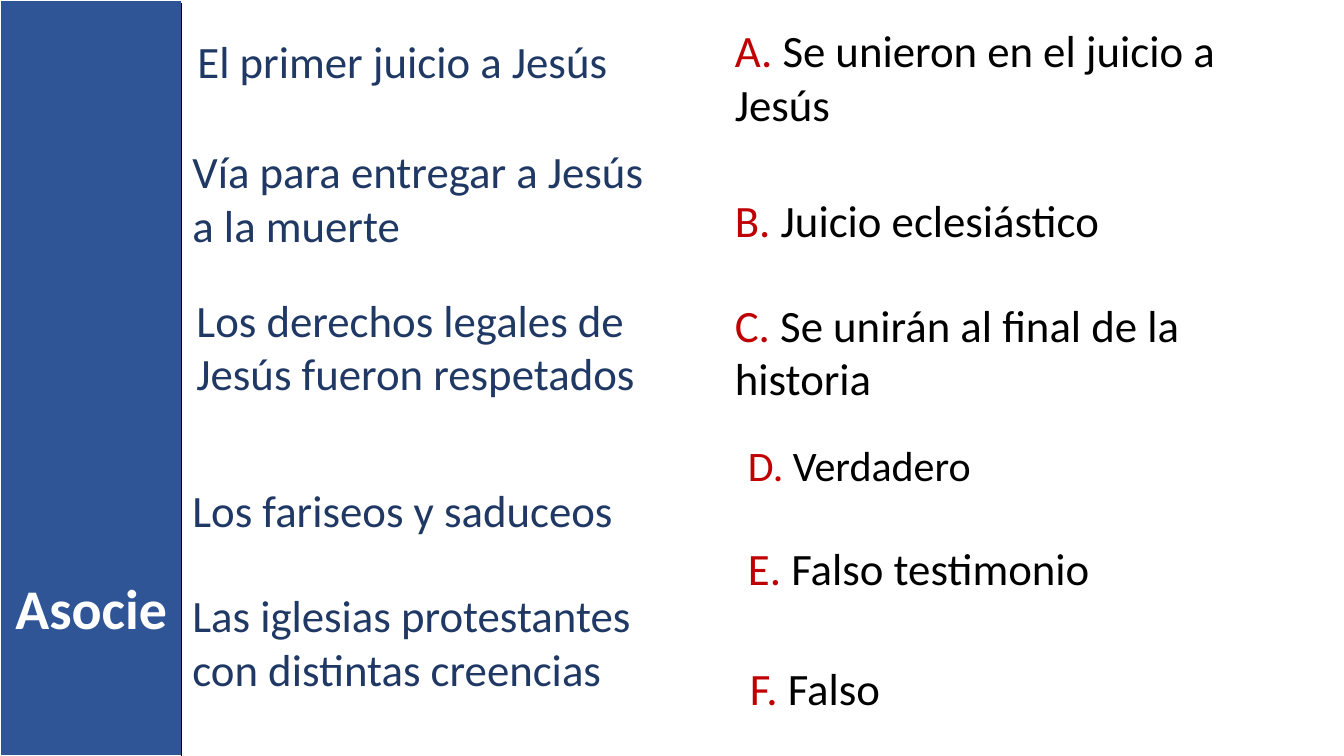
from dataclasses import dataclass

from lxml.etree import SubElement
from pptx import Presentation
from pptx.dml.color import RGBColor
from pptx.enum.shapes import MSO_CONNECTOR, MSO_SHAPE
from pptx.enum.text import MSO_AUTO_SIZE, PP_ALIGN
from pptx.oxml.ns import qn
from pptx.util import Inches, Pt


@dataclass(frozen=True)
class Theme:
    """Colours, font and type sizes of the slide."""
    font: str = "Calibri"
    band: RGBColor = RGBColor(0x2F, 0x55, 0x97)
    statement: RGBColor = RGBColor(0x20, 0x38, 0x64)
    letter: RGBColor = RGBColor(0xC0, 0x00, 0x00)
    answer: RGBColor = RGBColor(0x00, 0x00, 0x00)
    white: RGBColor = RGBColor(0xFF, 0xFF, 0xFF)
    title_size: int = 40
    body_size: int = 32
    small_size: int = 30


THEME = Theme()
SLIDE_WIDTH, SLIDE_HEIGHT = 13.33, 7.5
BAND_WIDTH = 1.81
ANSWERS_LEFT = 7.19

STATEMENTS = [
    ("El primer juicio a Jesús", 0.05, 0.29, 4.62, 0.64),
    ("Vía para entregar a Jesús a la muerte", 0, 1.38, 4.68, 1.18),
    ("Los derechos legales de Jesús fueron respetados", 0.04, 2.85, 4.68, 1.18),
    ("Los fariseos y saduceos", 0, 4.74, 4.94, 0.64),
    ("Las iglesias protestantes con distintas creencias", 0, 5.78, 4.9, 1.18),
]
ANSWERS = [
    ("A", "Se unieron en el juicio a Jesús", 0, 0.18, 5.36, 1.18, THEME.body_size),
    ("B", "Juicio eclesiástico", 0, 1.86, 5.96, 0.64, THEME.body_size),
    ("C", "Se unirán al final de la historia", 0, 2.9, 5.6, 1.18, THEME.body_size),
    ("D", "Verdadero", 0.13, 4.31, 5.23, 0.61, THEME.small_size),
    ("E", "Falso testimonio", 0.13, 5.32, 5.53, 0.64, THEME.body_size),
    ("F", "Falso", 0.15, 6.51, 5.67, 0.64, THEME.body_size),
]


def add_text(slide, left, top, width, height, runs, size):
    """Add a wrapping text box of (text, colour) runs and return its paragraph."""
    frame = slide.shapes.add_textbox(
        Inches(left), Inches(top), Inches(width), Inches(height)).text_frame
    frame.word_wrap = True
    frame.auto_size = MSO_AUTO_SIZE.SHAPE_TO_FIT_TEXT
    paragraph = frame.paragraphs[0]
    paragraph.font.name = THEME.font
    paragraph.font.size = Pt(size)
    for text, colour in runs:
        run = paragraph.add_run()
        run.text = text
        run.font.color.rgb = colour
    return paragraph


def add_title_band(slide, left, top, width, height):
    """Draw the side band with its edge line and title."""
    band = slide.shapes.add_shape(
        MSO_SHAPE.RECTANGLE, Inches(left), Inches(top), Inches(width), Inches(height))
    band.shadow.inherit = False
    band.fill.solid()
    band.fill.fore_color.rgb = THEME.band
    band.line.color.rgb = THEME.white
    band.line.width = Pt(1.5)

    title = add_text(slide, left, top + 5.64, width, 0.77,
                     [("Asocie", THEME.white)], THEME.title_size)
    title.font.bold = True
    title.alignment = PP_ALIGN.CENTER

    edge_x = Inches(left + width - 0.01)
    edge = slide.shapes.add_connector(
        MSO_CONNECTOR.STRAIGHT, edge_x, Inches(top + 0.03), edge_x, Inches(top + height))
    edge.line.color.rgb = THEME.answer
    edge.line.width = Pt(1)
    SubElement(edge._element.spPr, qn("a:effectLst"))


def add_statements(slide, left, top):
    """Place the statements to be matched."""
    for statement, indent, offset, width, height in STATEMENTS:
        add_text(slide, left + indent, top + offset, width, height,
                 [(statement, THEME.statement)], THEME.body_size)


def add_answers(slide, left, top):
    """Place the lettered answers."""
    for letter, answer, indent, offset, width, height, size in ANSWERS:
        add_text(slide, left + indent, top + offset, width, height,
                 [(f"{letter}. ", THEME.letter), (answer, THEME.answer)], size)


def main():
    """Build and save the matching exercise."""
    deck = Presentation()
    deck.slide_width = Inches(SLIDE_WIDTH)
    deck.slide_height = Inches(SLIDE_HEIGHT)
    slide = deck.slides.add_slide(deck.slide_layouts[6])
    add_title_band(slide, 0, 0, BAND_WIDTH, SLIDE_HEIGHT)
    add_statements(slide, BAND_WIDTH, 0)
    add_answers(slide, ANSWERS_LEFT, 0)
    deck.save("out.pptx")


if __name__ == "__main__":
    main()
